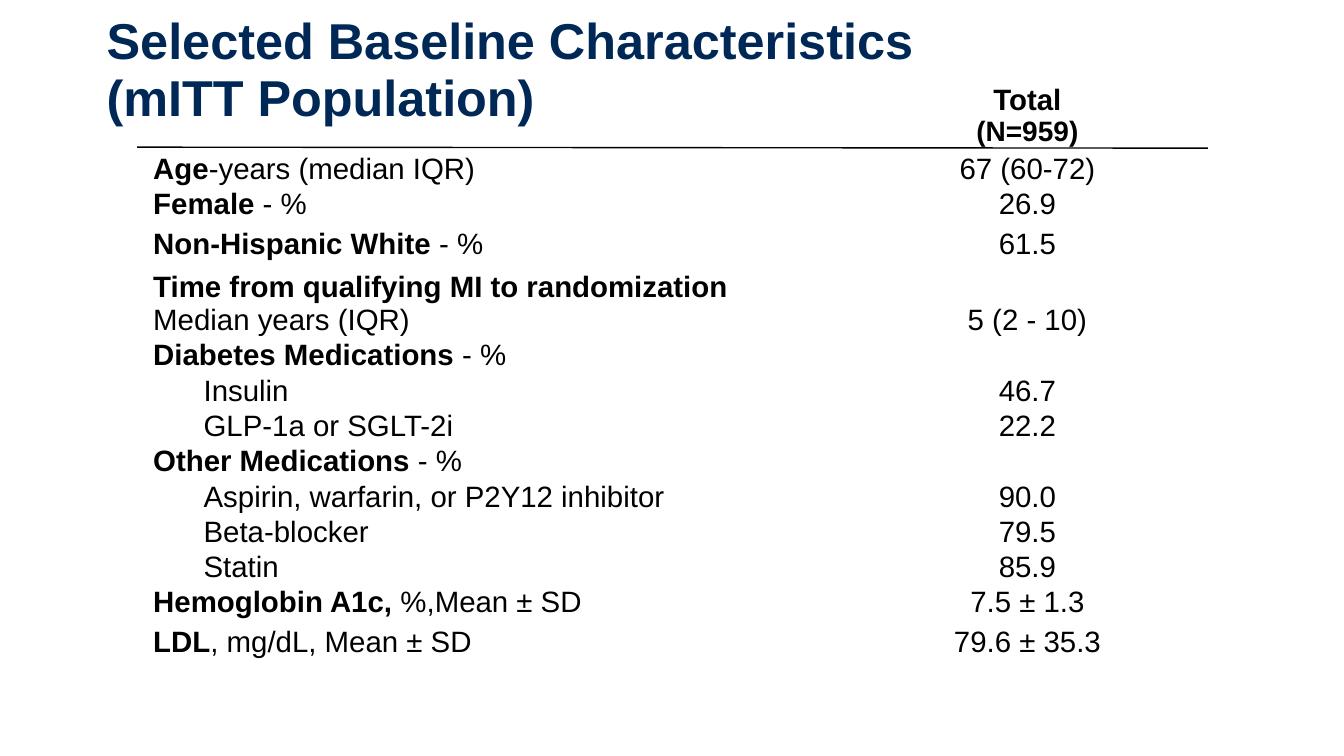
from dataclasses import dataclass

from lxml.etree import SubElement
from pptx import Presentation
from pptx.dml.color import RGBColor
from pptx.enum.shapes import MSO_CONNECTOR
from pptx.enum.text import MSO_ANCHOR, PP_ALIGN
from pptx.oxml.ns import qn
from pptx.util import Inches, Pt


@dataclass(frozen=True)
class Theme:
    font: str = "Arial"
    navy: RGBColor = RGBColor(0x00, 0x28, 0x56)
    black: RGBColor = RGBColor(0x00, 0x00, 0x00)
    title: Pt = Pt(36)
    body: Pt = Pt(21)
    count: Pt = Pt(20)


theme = Theme()


def add_run(p, text, bold=False, size=theme.body, color=theme.black):
    r = p.add_run()
    r.text = text
    r.font.color.rgb = color
    for name, value in {"name": theme.font, "size": size, "bold": bold}.items():
        setattr(r.font, name, value)


prs = Presentation()
prs.slide_width, prs.slide_height = Inches(13.33), Inches(7.5)
s = prs.slides.add_slide(prs.slide_layouts[6])

# Baseline table: bold label, plain label, value, row height
ROWS = [
    ("Age", "-years (median IQR)", "67 (60-72)", 0.35),
    ("Female ", "- %", "26.9", 0.35),
    ("Non-Hispanic White ", "- %", "61.5", 0.43),
    ("Time from qualifying MI to randomization", "Median years (IQR)", "5 (2 - 10)", 0.71),
    ("Diabetes Medications ", "- %", "", 0.36),
    ("", "Insulin", "46.7", 0.35),
    ("", "GLP-1a or SGLT-2i", "22.2", 0.35),
    ("Other Medications ", "- %", "", 0.35),
    ("", "Aspirin, warfarin, or P2Y12 inhibitor", "90.0", 0.35),
    ("", "Beta-blocker", "79.5", 0.35),
    ("", "Statin", "85.9", 0.35),
    ("Hemoglobin A1c, ", "%,Mean ± SD", "7.5 ± 1.3", 0.35),
    ("LDL", ", mg/dL, Mean ± SD", "79.6 ± 35.3", 0.43),
]
HEADER_HEIGHT = 0.68
TWO_LINE_LABEL = "Time from qualifying MI to randomization"

table = s.shapes.add_table(len(ROWS) + 1, 2, Inches(1.51), Inches(0.82),
                           Inches(10.98), Inches(5.81)).table
table.first_row = table.horz_banding = False
for column, width in zip(table.columns, (6.38, 4.6)):
    column.width = Inches(width)
for row, height in zip(table.rows, [HEADER_HEIGHT] + [entry[3] for entry in ROWS]):
    row.height = Inches(height)

cell_format = {
    "margin_left": Inches(0.01), "margin_right": Inches(0.01),
    "margin_top": Inches(0.01), "margin_bottom": 0,
    "vertical_anchor": MSO_ANCHOR.MIDDLE,
}
for cell in table.iter_cells():
    cell.fill.background()
    for name, value in cell_format.items():
        setattr(cell, name, value)

header = table.cell(0, 1)
header.vertical_anchor = MSO_ANCHOR.TOP
p = header.text_frame.paragraphs[0]
p.alignment = PP_ALIGN.CENTER
add_run(p, "Total", bold=True)
p.add_line_break()
add_run(p, "(N=959)", bold=True, size=theme.count)

for i, (bold_label, plain_label, value, _) in enumerate(ROWS, start=1):
    label_cell, value_cell = table.cell(i, 0), table.cell(i, 1)
    p = label_cell.text_frame.paragraphs[0]
    if bold_label:
        add_run(p, bold_label, bold=True)
    else:
        p.level = 1
        pPr = p._p.get_or_add_pPr()
        pPr.set("marL", str(Inches(0.5)))
        pPr.set("indent", "0")
    if bold_label == TWO_LINE_LABEL:
        p.add_line_break()
        label_cell.vertical_anchor = value_cell.vertical_anchor = MSO_ANCHOR.BOTTOM
    add_run(p, plain_label)
    if value:
        p = value_cell.text_frame.paragraphs[0]
        p.alignment = PP_ALIGN.CENTER
        add_run(p, value)

# Title
tf = s.shapes.add_textbox(Inches(0.96), Inches(0.67), Inches(12.1), Inches(0.76)).text_frame
tf.word_wrap = True
tf.vertical_anchor = MSO_ANCHOR.BOTTOM
tf.margin_bottom = Inches(0.16)
p = tf.paragraphs[0]
p.line_spacing = 0.95
add_run(p, "Selected Baseline Characteristics", True, theme.title, theme.navy)
p.add_line_break()
add_run(p, "(mITT Population)", True, theme.title, theme.navy)

# Rule under the header row
rule = s.shapes.add_connector(MSO_CONNECTOR.STRAIGHT, Inches(1.36), Inches(1.46),
                              Inches(11.98), Inches(1.47))
rule.line.color.rgb = theme.black
rule.line.width = Pt(1)
SubElement(rule._element.spPr, qn("a:effectLst"))

prs.save("out.pptx")
